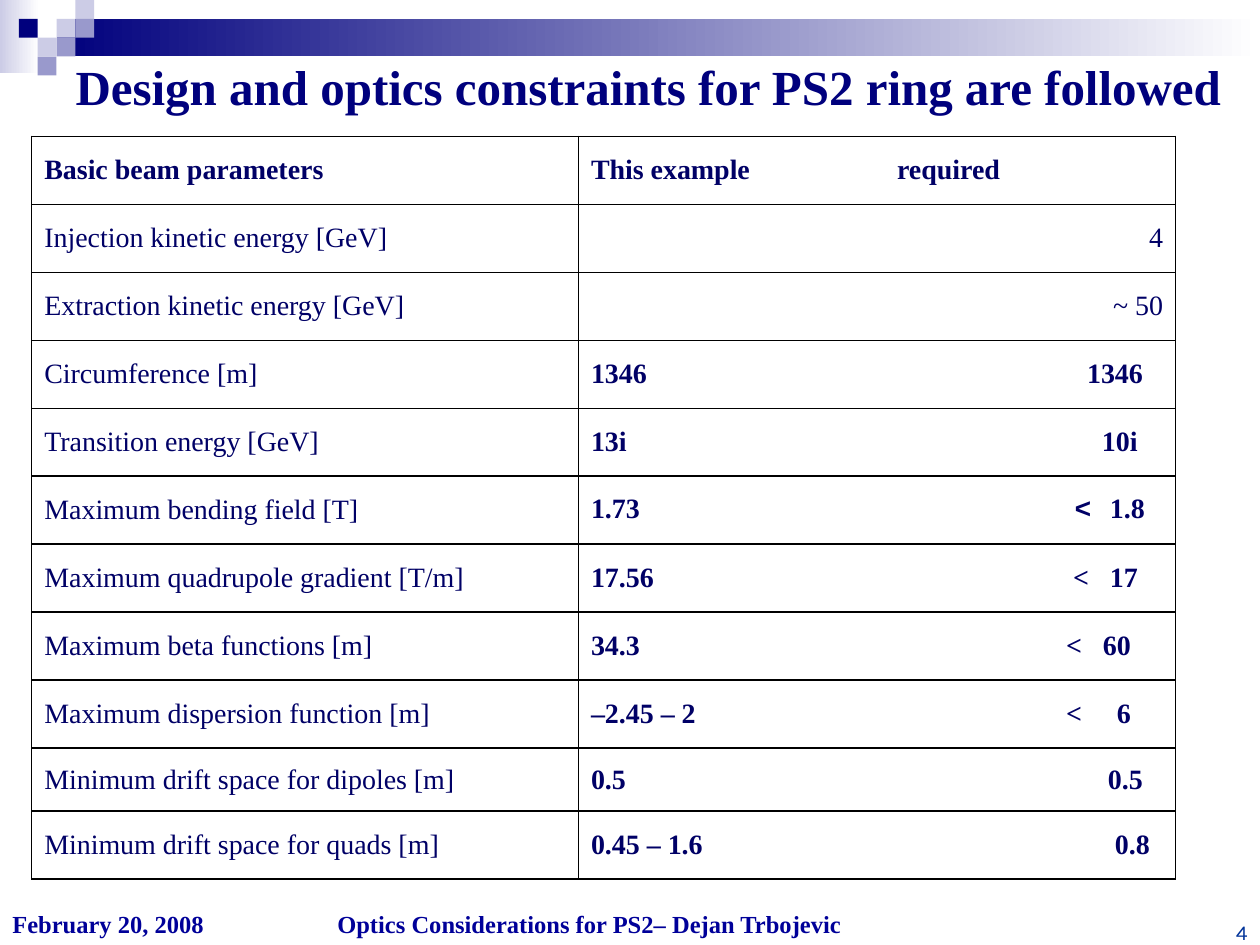
from dataclasses import dataclass
from lxml import etree
from pptx import Presentation
from pptx.dml.color import RGBColor
from pptx.enum.shapes import MSO_SHAPE
from pptx.enum.text import MSO_ANCHOR, PP_ALIGN
from pptx.oxml.ns import qn
from pptx.util import Cm, Pt

RECT = MSO_SHAPE.RECTANGLE
MIDDLE = MSO_ANCHOR.MIDDLE
LEFT, RIGHT = PP_ALIGN.LEFT, PP_ALIGN.RIGHT
SERIF = "Times New Roman"
MONO = "Courier New"
NAVY, INK, PALE, MID, WHITE = "00007D", "000066", "CCCCE6", "9999CC", "FFFFFF"
UNIT = 0.38


@dataclass
class Square:
    col: int
    row: int
    tint: str


@dataclass
class Note:
    left: float
    top: float
    width: float
    height: float
    text: str
    size: int
    face: str
    tint: str
    bold: bool
    align: PP_ALIGN


@dataclass
class Value:
    text: str
    stop: float = 0
    face: str = SERIF


@dataclass
class Row:
    label: str
    values: list[Value]
    height: float = 1.37
    head: bool = False
    single: bool = False


SQUARES = [
    Square(3, 1, PALE), Square(4, 0, PALE), Square(4, 1, MID),
    Square(2, 2, PALE), Square(1, 1, NAVY), Square(3, 2, MID),
    Square(2, 3, MID),
]

NOTES = [
    Note(0, 18.21, 5.92, 0.84, "February 20, 2008", 14, SERIF, "000099", True, LEFT),
    Note(6.55, 18.21, 14.6, 0.84, "Optics Considerations for PS2– Dejan Trbojevic",
         14, SERIF, "000099", True, LEFT),
    Note(23.93, 18.42, 1.47, 0.63, "4", 12, "Karla", "003399", False, RIGHT),
]

ROWS = [
    Row("Basic beam parameters", [Value("This example"), Value("required", 6.17)], head=True),
    Row("Injection kinetic energy [GeV]", [Value("4")], single=True),
    Row("Extraction kinetic energy [GeV]", [Value("~ 50")], single=True),
    Row("Circumference [m]", [Value("1346"), Value("1346", 10)]),
    Row("Transition energy [GeV]", [Value("13i"), Value("10i", 10.3)]),
    Row("Maximum bending field [T]",
        [Value("1.73"), Value("<", 9.75, MONO), Value("1.8", 10.46)]),
    Row("Maximum quadrupole gradient [T/m]",
        [Value("17.56"), Value("<", 9.72), Value("17", 10.46)]),
    Row("Maximum beta functions [m]",
        [Value("34.3"), Value("<", 9.58), Value("60", 10.32)]),
    Row("Maximum dispersion function [m]",
        [Value("–2.45 – 2"), Value("<", 9.58), Value("6", 10.6)]),
    Row("Minimum drift space for dipoles [m]", [Value("0.5"), Value("0.5", 10.42)], 1.27),
    Row("Minimum drift space for quads [m]", [Value("0.45 – 1.6"), Value("0.8", 10.56)]),
]


def rgb(code: str) -> RGBColor:
    return RGBColor.from_string(code)


def style(font, size: int, face: str, tint: str, bold: bool) -> None:
    font.size, font.name, font.bold = Pt(size), face, bold
    font.color.rgb = rgb(tint)


def block(slide, left: float, top: float, width: float, height: float, *tints: str) -> None:
    shape = slide.shapes.add_shape(RECT, Cm(left), Cm(top), Cm(width), Cm(height))
    shape.shadow.inherit = False
    shape.line.fill.background()
    if len(tints) == 1:
        shape.fill.solid()
        shape.fill.fore_color.rgb = rgb(tints[0])
        return
    shape.fill.gradient()
    shape.fill.gradient_angle = 0
    for stop, tint in zip(shape.fill.gradient_stops, tints):
        stop.color.rgb = rgb(tint)


def write(slide, note: Note) -> None:
    box = slide.shapes.add_textbox(
        Cm(note.left), Cm(note.top), Cm(note.width), Cm(note.height))
    box.text_frame.word_wrap = True
    para = box.text_frame.paragraphs[0]
    para.text, para.alignment = note.text, note.align
    style(para.font, note.size, note.face, note.tint, note.bold)


def frame(cell) -> None:
    props = cell._tc.get_or_add_tcPr()
    for side in ("a:lnL", "a:lnR", "a:lnT", "a:lnB"):
        line = etree.SubElement(props, qn(side), w=str(Pt(1)))
        solid = etree.SubElement(line, qn("a:solidFill"))
        etree.SubElement(solid, qn("a:srgbClr"), val="000000")
    cell.fill.background()


def fill(cell, values: list[Value], bold: bool, align: PP_ALIGN) -> None:
    frame(cell)
    cell.vertical_anchor = MIDDLE
    para = cell.text_frame.paragraphs[0]
    para.alignment, para.space_before = align, Pt(3.2)
    stops = [value.stop for value in values if value.stop]
    if stops:
        tabs = etree.SubElement(para._p.get_or_add_pPr(), qn("a:tabLst"))
        for stop in stops:
            etree.SubElement(tabs, qn("a:tab"), pos=str(Cm(stop)), algn="l")
    style(para.font, 16, SERIF, INK, bold)
    for value in values:
        run = para.add_run()
        run.text = "\t" + value.text if value.stop else value.text
        style(run.font, 16, value.face, INK, bold)


def grid(slide) -> None:
    high = sum(row.height for row in ROWS)
    table = slide.shapes.add_table(
        len(ROWS), 2, Cm(0.64), Cm(2.75), Cm(23.06), Cm(high)).table
    table.first_row = table.horz_banding = False
    table.columns[0].width, table.columns[1].width = Cm(11.02), Cm(12.04)
    for spot, row in enumerate(ROWS):
        table.rows[spot].height = Cm(row.height)
        fill(table.cell(spot, 0), [Value(row.label)], row.head, LEFT)
        fill(table.cell(spot, 1), row.values, not row.single, RIGHT if row.single else LEFT)


def main() -> None:
    deck = Presentation()
    deck.slide_width, deck.slide_height = Cm(25.4), Cm(19.05)
    slide = deck.slides.add_slide(deck.slide_layouts[5])

    block(slide, 0, 0, 0.79, 1.47, PALE, WHITE)
    block(slide, 1.14, UNIT, 24.26, 0.76, NAVY, WHITE)
    for item in SQUARES:
        block(slide, item.col * UNIT, item.row * UNIT, UNIT, UNIT, item.tint)

    title = slide.shapes.title
    title.left, title.top, title.width, title.height = Cm(1.27), Cm(1.12), Cm(23.83), Cm(1.24)
    title.text_frame.vertical_anchor = MIDDLE
    para = title.text_frame.paragraphs[0]
    para.text = "Design and optics constraints for PS2 ring are followed"
    para.alignment = LEFT
    style(para.font, 28, SERIF, NAVY, True)

    grid(slide)
    for note in NOTES:
        write(slide, note)
    deck.save("out.pptx")


if __name__ == "__main__":
    main()
